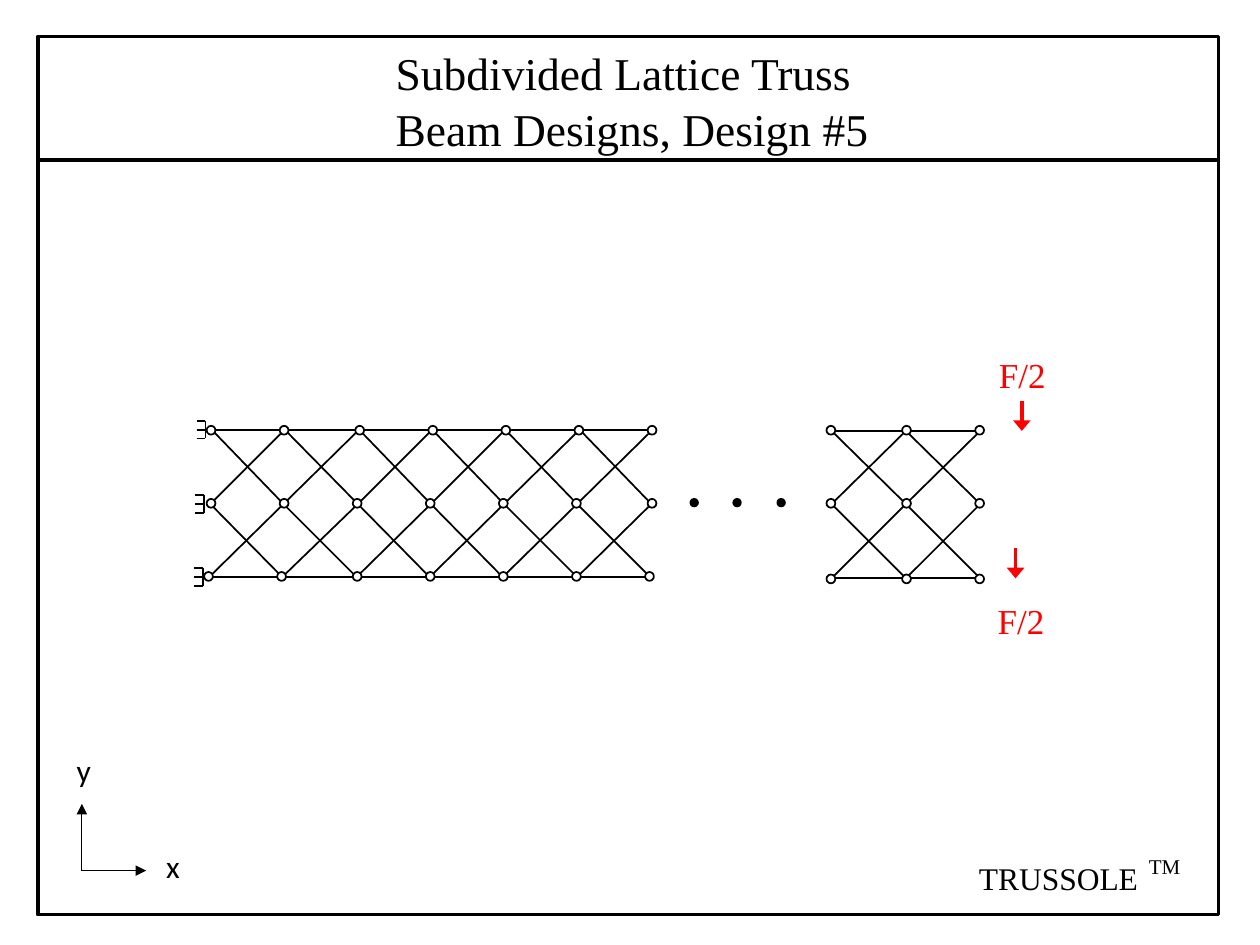
import pptx
import pptx.dml.color
import pptx.enum.shapes
import pptx.enum.text
import pptx.oxml.ns
import pptx.util
from lxml import etree

SCALE = 9144  # EMU per px, 100 px to the inch
BLACK, WHITE, RED = "000000", "FFFFFF", "FF0000"
SERIF, SANS = "Times New Roman", "Calibri"
ROWS = 3
NODE_SIZE = 7


def px(length):
    return pptx.util.Emu(round(length) * SCALE)


def colour(value):
    return pptx.dml.color.RGBColor.from_string(value)


def add_child(parent, tag, **attributes):
    return etree.SubElement(parent, pptx.oxml.ns.qn(tag), attributes)


def write_text(box, text, size, font=SERIF, ink=BLACK, leading=None):
    """Fill a box with one left-aligned paragraph per line of text."""
    frame = box.text_frame
    frame.text = text
    frame.word_wrap = False
    frame.auto_size = pptx.enum.text.MSO_AUTO_SIZE.NONE
    frame.vertical_anchor = pptx.enum.text.MSO_ANCHOR.TOP
    for para in frame.paragraphs:
        para.alignment = pptx.enum.text.PP_ALIGN.LEFT
        para.line_spacing = pptx.util.Pt(leading or 1.22 * size)
        for span in para.runs:
            span.font.size = pptx.util.Pt(size)
            span.font.name = font
            span.font.color.rgb = colour(ink)


def add_label(page, text, left, top, width, height, size, **style):
    box = page.shapes.add_textbox(px(left), px(top), px(width), px(height))
    write_text(box, text, size, **style)


def add_line(page, start, end, ink=BLACK, weight=1, head_width=None):
    """Draw a straight line, with an arrowhead at its end if head_width is set."""
    line = page.shapes.add_connector(
        pptx.enum.shapes.MSO_CONNECTOR.STRAIGHT,
        *(px(value) for value in (*start, *end)))
    line.line.color.rgb = colour(ink)
    line.line.width = pptx.util.Pt(weight)
    if head_width:
        add_child(line.line._get_or_add_ln(), "a:tailEnd",
                  type="triangle", w=head_width, len="med")
    add_child(line._element.spPr, "a:effectLst")


def add_outline(page, kind, left, top, width, height, fill=None, weight=1):
    shape = page.shapes.add_shape(kind, px(left), px(top), px(width), px(height))
    shape.shadow.inherit = False
    if fill:
        shape.fill.solid()
        shape.fill.fore_color.rgb = colour(fill)
    else:
        shape.fill.background()
    shape.line.color.rgb = colour(BLACK)
    shape.line.width = pptx.util.Pt(weight)


def add_dot(page, centre, size, fill):
    x, y = centre
    add_outline(page, pptx.enum.shapes.MSO_SHAPE.OVAL,
                x - size / 2, y - size / 2, size, size, fill)


def add_support(page, node):
    """Draw the fixed wall bracket to the left of a node."""
    x, y = node
    wall, tip, reach = x - 5, x - 12, 7
    add_line(page, (wall, y - reach), (wall, y + reach))
    for offset in (-reach, 0, reach):
        add_line(page, (tip, y + offset), (wall, y + offset))


def add_truss(page, left, top, bays, pitch, lean=0):
    """Draw a truss of crossed bays and return its nodes by row."""
    nodes = [[(round(left - lean * row + pitch * column), round(top + 58.5 * row))
              for column in range(bays + 1)] for row in range(ROWS)]
    # Top and bottom chords
    for row in (nodes[0], nodes[-1]):
        for start, end in zip(row, row[1:]):
            add_line(page, start, end)
    # Crossed diagonals
    for upper, lower in zip(nodes, nodes[1:]):
        for bay in range(bays):
            add_line(page, upper[bay], lower[bay + 1])
            add_line(page, lower[bay], upper[bay + 1])
    # Joints on top of the members
    for row in nodes:
        for node in row:
            add_dot(page, node, NODE_SIZE, WHITE)
    return nodes


def add_axes(page):
    origin = (65, 691)
    add_line(page, origin, (116, 691), weight=0.5, head_width="med")
    add_line(page, origin, (65, 638), weight=0.5, head_width="med")
    add_label(page, "x", 122, 667, 31, 40, 18, font=SANS)
    add_label(page, "y", 51, 591, 31, 40, 18, font=SANS)


def add_load(page, x, tip, label_left, label_top):
    add_line(page, (x, tip - 24), (x, tip), RED, weight=2, head_width="lg")
    add_label(page, "F/2", label_left, label_top, 70, 44, 20, ink=RED)


def main():
    deck = pptx.Presentation()
    deck.slide_width, deck.slide_height = px(1000), px(750)
    page = deck.slides.add_slide(deck.slide_layouts[5])

    # Frame and title
    add_outline(page, pptx.enum.shapes.MSO_SHAPE.RECTANGLE,
                30, 29, 937, 697, weight=2)
    add_line(page, (30, 127), (967, 127), weight=2)
    title = page.shapes.title
    title.left, title.top, title.width, title.height = map(px, (304, 30, 408, 98))
    write_text(title, "Subdivided Lattice Truss\nBeam Designs, Design #5", 26)

    # Beam: fixed part, dots for the bays left out, loaded end
    fixed_part = add_truss(page, 168, 341, bays=6, pitch=58.3, lean=1)
    for row in fixed_part:
        add_support(page, row[0])
    for x in (551, 585, 620):
        add_dot(page, (x, 399), 6, BLACK)
    add_truss(page, 660, 342, bays=2, pitch=59)

    # Loads
    add_load(page, 811, 342, 783, 275)
    add_load(page, 806, 459, 782, 470)

    # Axes and mark
    add_axes(page)
    add_label(page, "TRUSSOLE", 767, 676, 152, 40, 18)
    add_label(page, "TM", 902, 665, 51, 40, 12, leading=20)

    deck.save("out.pptx")


if __name__ == "__main__":
    main()
